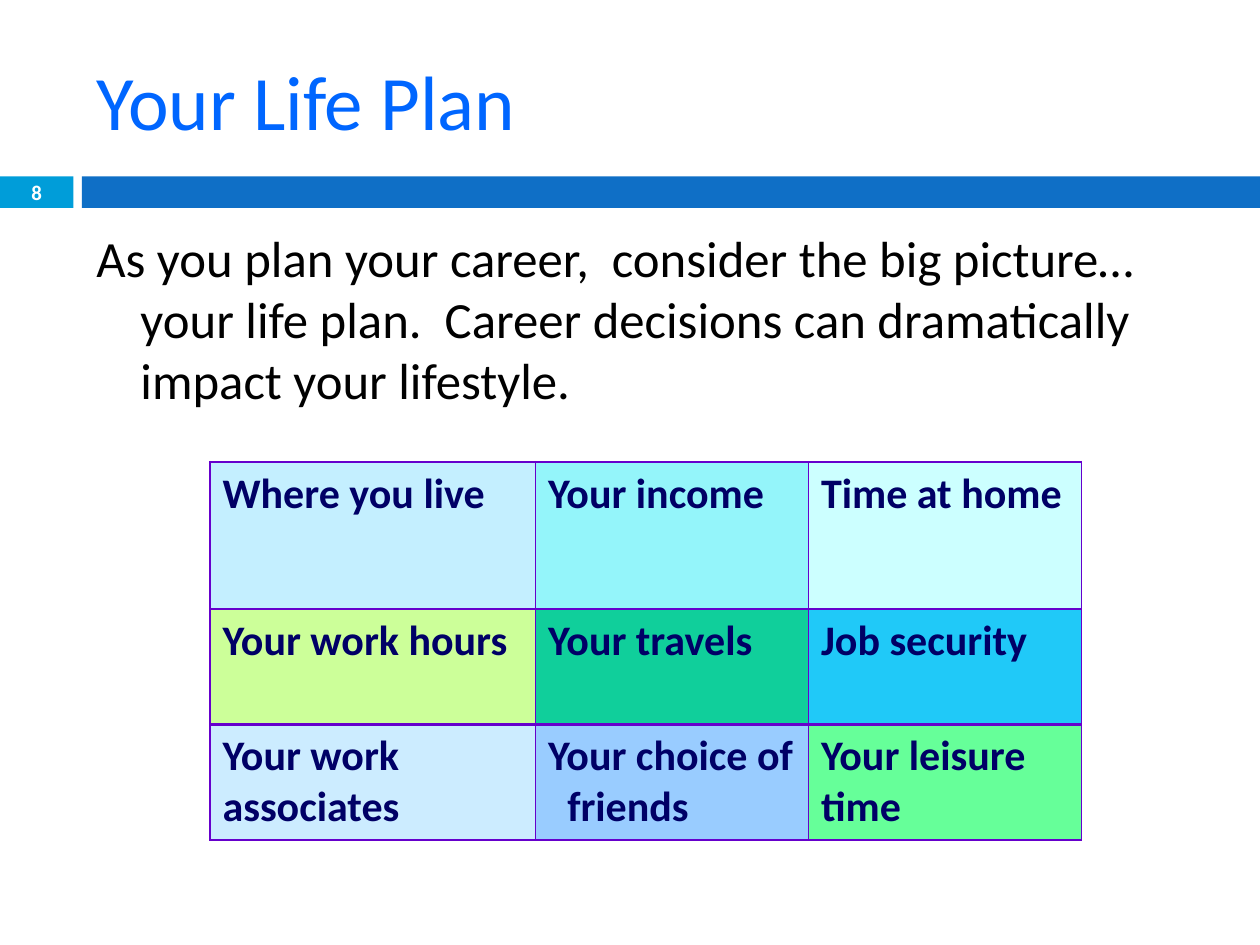
from lxml.etree import SubElement as Sub
from pptx import Presentation
from pptx.dml.color import RGBColor as RGB
from pptx.enum.shapes import MSO_SHAPE as Shape
from pptx.enum.text import MSO_ANCHOR as Anchor, PP_ALIGN as Align
from pptx.oxml.ns import qn
from pptx.util import Pt

FONT = "Calibri"
WHITE = RGB(0xFF, 0xFF, 0xFF)
BLACK = RGB(0, 0, 0)
TITLE = RGB(0x00, 0x66, 0xFF)
CYAN = RGB(0x00, 0x9D, 0xD9)
BLUE = RGB(0x0F, 0x6F, 0xC6)
NAVY = RGB(0x00, 0x00, 0x66)
PURPLE = RGB(0x66, 0x00, 0xCC)

EDGES = {"a:lnL": 1, "a:lnR": 1, "a:lnT": 1.5, "a:lnB": 1.5}
COLS = (186, 156, 156)
ROWS = (84, 66, 66)
CELLS = (
    (("Where you live", RGB(0xC4, 0xEF, 0xFF)),
     ("Your income", RGB(0x94, 0xF5, 0xFA)),
     ("Time at home", RGB(0xCC, 0xFF, 0xFF))),
    (("Your work hours", RGB(0xCC, 0xFF, 0x99)),
     ("Your travels", RGB(0x10, 0xCF, 0x9B)),
     ("Job security", RGB(0x20, 0xC9, 0xF8))),
    (("Your work associates", RGB(0xCC, 0xEC, 0xFF)),
     ("Your choice of friends", RGB(0x99, 0xCC, 0xFF)),
     ("Your leisure time", RGB(0x66, 0xFF, 0x99))),
)


def add_run(para, text, size, color, bold=False):
    run = para.add_run()
    run.text = text
    font = run.font
    font.name, font.size, font.bold = FONT, Pt(size), bold
    font.color.rgb = color


def hang(para, size):
    props = para._p.get_or_add_pPr()
    props.set("marL", str(Pt(size)))
    props.set("indent", str(Pt(-size)))


def add_bar(slide, left, width, color):
    bar = slide.shapes.add_shape(
        Shape.RECTANGLE, Pt(left), Pt(100.8), Pt(width), Pt(18))
    bar.shadow.inherit = False
    bar.fill.solid()
    bar.fill.fore_color.rgb = color
    bar.line.fill.background()


def add_text(slide, box, text, size, color, bold=False, anchor=Anchor.MIDDLE):
    frame = slide.shapes.add_textbox(*map(Pt, box)).text_frame
    frame.word_wrap = True
    frame.vertical_anchor = anchor
    para = frame.paragraphs[0]
    add_run(para, text, size, color, bold)
    return para


def add_edges(cell):
    props = cell._tc.get_or_add_tcPr()
    for tag, width in EDGES.items():
        line = Sub(props, qn(tag), w=str(Pt(width)))
        fill = Sub(line, qn("a:solidFill"))
        Sub(fill, qn("a:srgbClr"), val=str(PURPLE))


def add_grid(slide):
    table = slide.shapes.add_table(
        len(ROWS), len(COLS), Pt(120), Pt(264),
        Pt(sum(COLS)), Pt(sum(ROWS))).table
    table.first_row = table.horz_banding = False
    for col, width in zip(table.columns, COLS):
        col.width = Pt(width)
    for row, height, items in zip(table.rows, ROWS, CELLS):
        row.height = Pt(height)
        for cell, (text, color) in zip(row.cells, items):
            add_edges(cell)
            cell.fill.solid()
            cell.fill.fore_color.rgb = color
            add_run(cell.text_frame.paragraphs[0], text, 24, NAVY, True)
    hang(table.cell(2, 1).text_frame.paragraphs[0], 11)


def main():
    deck = Presentation()
    deck.slide_width, deck.slide_height = Pt(720), Pt(540)
    slide = deck.slides.add_slide(deck.slide_layouts[6])
    add_bar(slide, 0, 42, CYAN)
    add_bar(slide, 46.8, 673.2, BLUE)
    add_text(slide, (48, 18, 642, 78), "Your Life Plan", 44, TITLE)
    body = add_text(
        slide, (48, 126, 642, 120),
        "As you plan your career,  consider the big picture…your life plan.  "
        "Career decisions can dramatically impact your lifestyle.",
        29, BLACK, anchor=Anchor.TOP)
    body.space_before = Pt(7)
    hang(body, 25.2)
    add_grid(slide)
    num = add_text(slide, (0, 100, 42, 19.5), "8", 11.9, WHITE, True)
    num.alignment = Align.CENTER
    deck.save("out.pptx")


if __name__ == "__main__":
    main()
